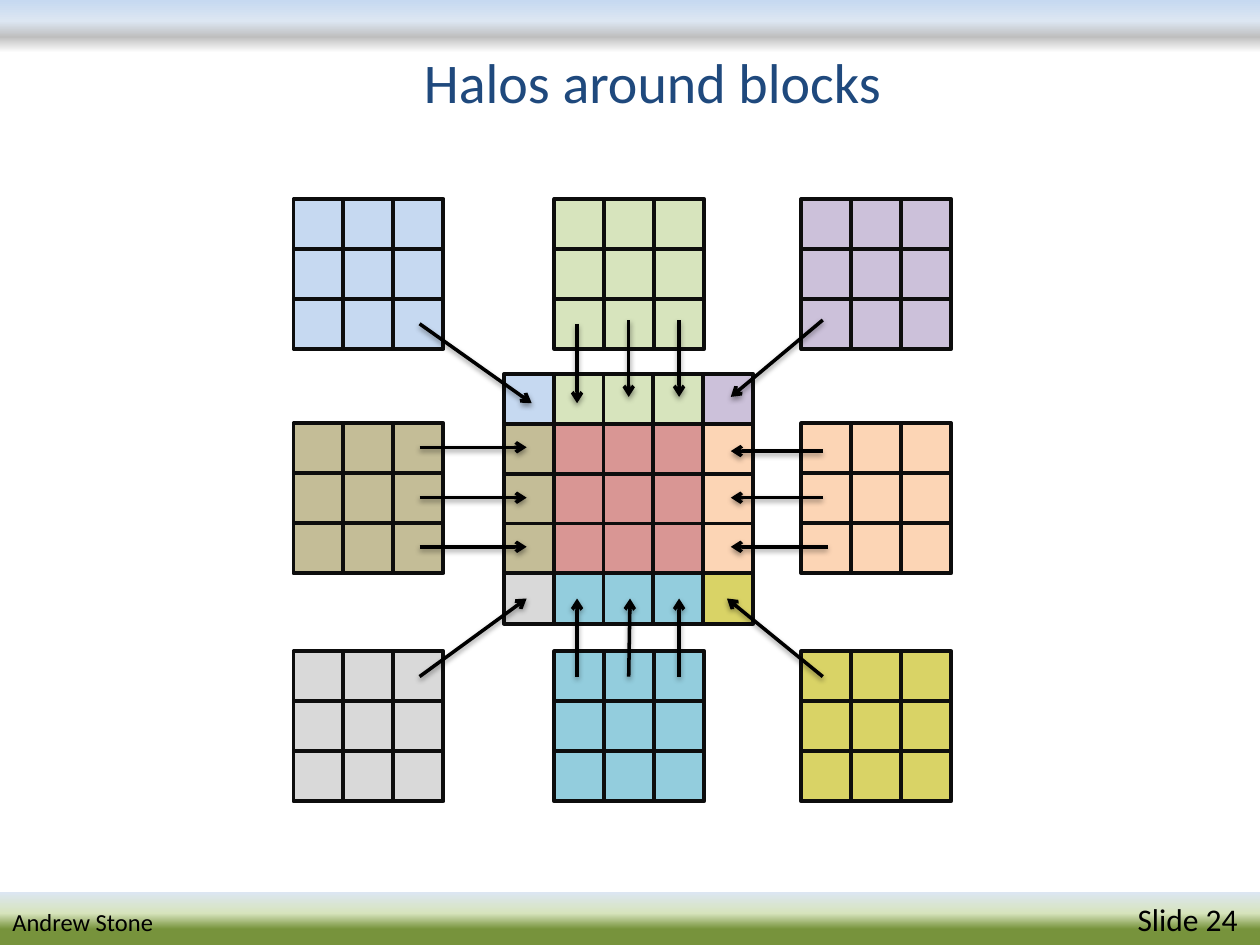
from lxml import etree
from pptx import Presentation
from pptx import util as u
from pptx.dml import color as clr
from pptx.enum import shapes, text
from pptx.oxml import ns, parse_xml

HUES = {
    "title": "1F497D", "ink": "000000", "edge": "0D0D0D",
    "blue": "C6D9F1", "green": "D7E4BD", "violet": "CCC1DA",
    "tan": "C4BD97", "red": "D99694", "peach": "FCD5B5",
    "grey": "D9D9D9", "aqua": "93CDDD", "gold": "D9D366",
    "pale": "DCE6F2", "moss": "77933C", "ash": "BFBFBF", "white": "FFFFFF",
}

# Blocks: one hue per place in the 3 by 3 layout
BLOCKS = [["blue", "green", "violet"],
          ["tan", "red", "peach"],
          ["grey", "aqua", "gold"]]
LEFTS, TOPS = (2.33, 4.4, 6.36), (1.58, 3.36, 5.17)
HALO = (4, 2.97)
SIZE = 0.4
STEP = 1.58 / 4  # the halo's five cells span four steps

# Arrows: from x, from y, to x, to y
COLS, ROWS = (4.58, 4.99, 5.39), (3.55, 3.95, 4.34)
ARROWS = (
    [(3.33, 2.57, 4.22, 3.2), (6.53, 2.54, 5.8, 3.15),
     (3.33, 5.37, 4.18, 4.75), (6.53, 5.37, 5.77, 4.75)]
    + [(x, y, x, end) for x, y, end in zip(COLS, (2.57, 2.54, 2.54), (3.2, 3.15, 3.15))]
    + [(x, 5.37, end, 4.75) for x, end in zip(COLS, (4.58, 5, 5.39))]
    + [(3.33, y, 4.18, y) for y in ROWS]
    + [(x, y, 5.8, y) for x, y in zip((6.53, 6.53, 6.57), (3.58, 3.95, 4.34))]
)

SHADE = f"""<a:effectLst {ns.nsdecls('a')}>
  <a:outerShdw blurRad="{u.Pt(3.1)}" dist="{u.Pt(1.6)}" dir="5400000" rotWithShape="0">
    <a:srgbClr val="{HUES['ink']}"><a:alpha val="38000"/></a:srgbClr>
  </a:outerShdw>
</a:effectLst>"""


def hue(name):
    return clr.RGBColor.from_string(HUES[name])


def set_all(item, vals):
    for key, val in vals.items():
        setattr(item, key, val)


def add_run(para, words, size, name):
    run = para.add_run()
    run.text = words
    set_all(run.font, {"name": "Calibri", "size": u.Pt(size)})
    run.font.color.rgb = hue(name)


def add_rect(slide, *box):
    rect = slide.shapes.add_shape(shapes.MSO_SHAPE.RECTANGLE, *map(u.Inches, box))
    rect.shadow.inherit = False
    return rect


def add_bar(slide, top, stops):
    """A full-width band with a gradient that runs downwards."""
    bar = add_rect(slide, 0, top, 10, 0.42)
    bar.line.fill.background()
    bar.fill.gradient()
    bar.fill.gradient_angle = 270
    stop_list = bar._element.spPr.find(".//" + ns.qn("a:gsLst"))
    for old in list(stop_list):
        stop_list.remove(old)
    for place, name in stops:
        stop = etree.SubElement(stop_list, ns.qn("a:gs"), pos=str(place * 1000))
        etree.SubElement(stop, ns.qn("a:srgbClr"), val=HUES[name])
    return bar


def add_foot(bar):
    frame = bar.text_frame
    set_all(frame, {"vertical_anchor": text.MSO_ANCHOR.MIDDLE, "word_wrap": True})
    para = frame.paragraphs[0]
    para.alignment = text.PP_ALIGN.LEFT
    tabs = etree.SubElement(para._p.get_or_add_pPr(), ns.qn("a:tabLst"))
    etree.SubElement(tabs, ns.qn("a:tab"), pos=str(u.Inches(8.93)), algn="l")
    add_run(para, "Andrew Stone\t", 14, "ink")
    add_run(para, "Slide 24", 18, "ink")


def add_title(slide, words):
    title = slide.shapes.title
    set_all(title, {"left": u.Inches(0.68), "top": u.Inches(0.02),
                    "width": u.Inches(9), "height": u.Inches(1.25)})
    title.text_frame.vertical_anchor = text.MSO_ANCHOR.MIDDLE
    para = title.text_frame.paragraphs[0]
    para.alignment = text.PP_ALIGN.CENTER
    add_run(para, words, 32, "title")


def add_grid(slide, left, top, names):
    """Square cells, one for each hue name in the rows of names."""
    for row, line in enumerate(names):
        for col, name in enumerate(line):
            cell = add_rect(slide, left + col * STEP, top + row * STEP, SIZE, SIZE)
            cell.fill.solid()
            cell.fill.fore_color.rgb = hue(name)
            cell.line.color.rgb = hue("edge")
            cell.line.width = u.Pt(2.25)


def add_arrow(slide, *ends):
    arrow = slide.shapes.add_connector(
        shapes.MSO_CONNECTOR.STRAIGHT, *map(u.Inches, ends))
    arrow.line.color.rgb = hue("ink")
    arrow.line.width = u.Pt(2)
    etree.SubElement(arrow.line._get_or_add_ln(), ns.qn("a:tailEnd"), type="arrow")
    arrow._element.spPr.append(parse_xml(SHADE))


def main():
    deck = Presentation()
    set_all(deck, {"slide_width": u.Inches(10), "slide_height": u.Inches(7.5)})
    slide = deck.slides.add_slide(deck.slide_layouts[5])

    # Frame and title
    add_foot(add_bar(slide, 7.08, [(0, "pale"), (40, "green"), (70, "moss")]))
    add_bar(slide, 0, [(0, "blue"), (40, "pale"), (70, "ash"), (100, "white")])
    add_title(slide, "Halos around blocks")

    # Outer blocks
    for top, line in zip(TOPS, BLOCKS):
        for left, name in zip(LEFTS, line):
            if name != "red":
                add_grid(slide, left, top, [[name] * 3] * 3)

    # Centre block with its halo: each edge takes the hue of its neighbour
    near = (0, 1, 1, 1, 2)
    add_grid(slide, *HALO, [[BLOCKS[row][col] for col in near] for row in near])

    # Halo exchange
    for ends in ARROWS:
        add_arrow(slide, *ends)

    deck.save("out.pptx")


if __name__ == "__main__":
    main()
